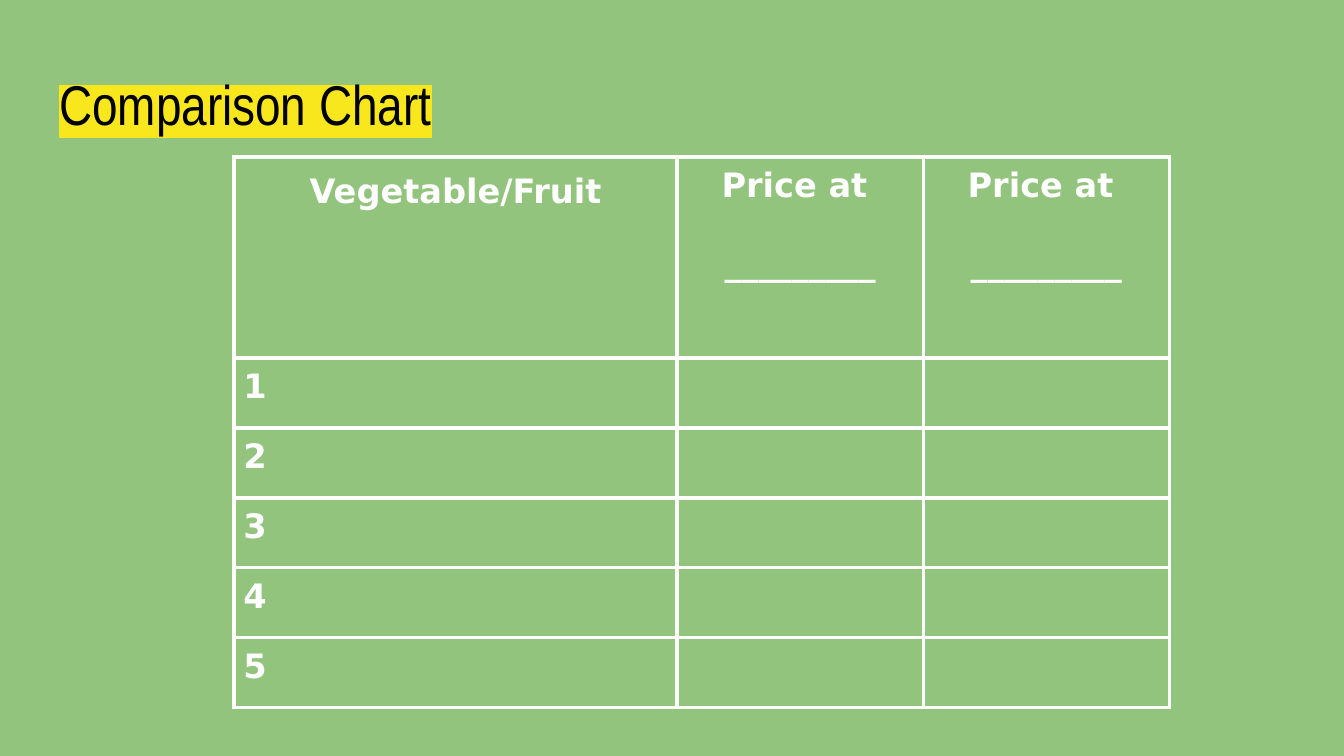
from lxml import etree
from pptx import Presentation
from pptx.dml.color import RGBColor
from pptx.enum.text import MSO_ANCHOR, PP_ALIGN
from pptx.oxml.ns import qn
from pptx.util import Cm, Pt

GREEN = RGBColor(0x93, 0xC4, 0x7D)
YELLOW = RGBColor(0xF8, 0xE7, 0x1C)
WHITE = RGBColor(0xFF, 0xFF, 0xFF)
BLACK = RGBColor(0x00, 0x00, 0x00)
CENTER = PP_ALIGN.CENTER
LEFT = PP_ALIGN.LEFT
TOP = MSO_ANCHOR.TOP
BOTTOM = MSO_ANCHOR.BOTTOM


def put_text(frame, text, font="DejaVu Sans", size=18, color=WHITE, bold=True,
             align=LEFT, gap=0, lead=None, mark=None):
    """Write one paragraph per line, with gap points between them."""
    for i, line in enumerate(text.split("\n")):
        para = frame.paragraphs[0] if i == 0 else frame.add_paragraph()
        para.alignment = align
        if lead:
            para.line_spacing = lead
        if i:
            para.space_before = Pt(gap)
        run = para.add_run()
        run.text = line
        run.font.size = Pt(size)
        run.font.bold = bold
        run.font.color.rgb = color
        if mark:
            light = etree.SubElement(run.font._element, qn("a:highlight"))
            etree.SubElement(light, qn("a:srgbClr"), val=str(mark))
        run.font.name = font


def style_cell(cell, color, width):
    """Clear the fill and draw all four borders."""
    props = cell._tc.get_or_add_tcPr()
    for side in ("a:lnL", "a:lnR", "a:lnT", "a:lnB"):
        line = etree.SubElement(props, qn(side), w=str(Pt(width)))
        fill = etree.SubElement(line, qn("a:solidFill"))
        etree.SubElement(fill, qn("a:srgbClr"), val=str(color))
    cell.fill.background()
    cell.vertical_anchor = TOP
    cell.margin_left = cell.margin_right = Cm(0.18)
    cell.margin_top = cell.margin_bottom = Cm(0.18)


def add_title(slide, left, top, width, height):
    frame = slide.shapes.add_textbox(left, top, width, height).text_frame
    frame.word_wrap = True
    frame.vertical_anchor = BOTTOM
    frame.margin_left = frame.margin_right = Cm(0.25)
    frame.margin_top = frame.margin_bottom = Cm(0.25)
    put_text(frame, "Comparison Chart", font="Arial Narrow", size=30,
             color=BLACK, bold=False, mark=YELLOW)


def add_prices(slide, left, top, width, height):
    count = 5
    head = Cm(3.8)
    price = Cm(4.65)
    table = slide.shapes.add_table(count + 1, 3, left, top, width, height).table
    table.first_row = table.horz_banding = False

    # Column widths and row heights
    for col, size in zip(table.columns, (width - 2 * price, price, price)):
        col.width = size
    for i, row in enumerate(table.rows):
        row.height = (height - head) // count if i else head
    for cell in table.iter_cells():
        style_cell(cell, WHITE, 2.25)

    # Header row
    put_text(table.cell(0, 0).text_frame, "Vegetable/Fruit", align=CENTER, lead=1.15)
    for col in (1, 2):
        put_text(table.cell(0, col).text_frame, "Price at \n_________",
                 align=CENTER, gap=21)

    # Numbered rows
    for row in range(1, count + 1):
        put_text(table.cell(row, 0).text_frame, str(row))


def main():
    deck = Presentation()
    deck.slide_width, deck.slide_height = Cm(25.4), Cm(14.29)
    slide = deck.slides.add_slide(deck.slide_layouts[6])
    slide.background.fill.solid()
    slide.background.fill.fore_color.rgb = GREEN
    add_title(slide, Cm(0.87), Cm(1.24), Cm(23.67), Cm(1.6))
    add_prices(slide, Cm(4.42), Cm(2.97), Cm(17.68), Cm(10.4))
    deck.save("out.pptx")


if __name__ == "__main__":
    main()
